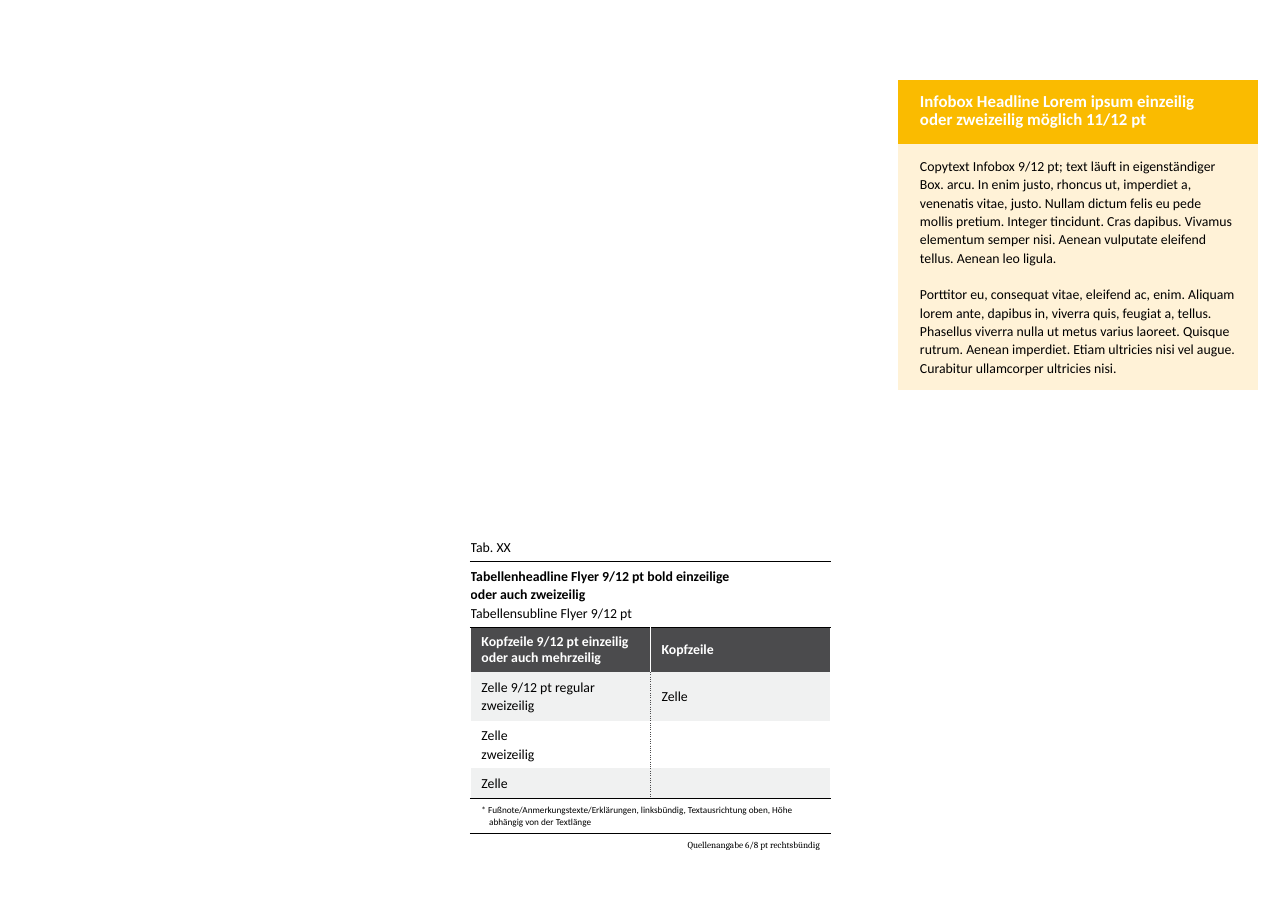
import pptx
import pptx.dml.color
import pptx.enum.text
import pptx.oxml
import pptx.oxml.ns
import pptx.util

Inches = pptx.util.Inches
Pt = pptx.util.Pt
RGBColor = pptx.dml.color.RGBColor
Align = pptx.enum.text.PP_ALIGN
Anchor = pptx.enum.text.MSO_ANCHOR

WHITE = RGBColor(0xFF, 0xFF, 0xFF)
BLACK = RGBColor(0, 0, 0)
GRAPHITE = RGBColor(0x4B, 0x4B, 0x4D)
PALE_GREY = RGBColor(0xF0, 0xF1, 0xF1)
AMBER = RGBColor(0xFA, 0xBB, 0x00)
CREAM = RGBColor(0xFF, 0xF2, 0xD7)
NO_STYLE = "{2D5ABB26-0587-4C30-8999-92F81FD0307C}"
SIDES = ("L", "R", "T", "B")

CAPTION = ["Tab. XX"]
HEADLINE = [
    "Tabellenheadline Flyer 9/12 pt bold einzeilige",
    "oder auch zweizeilig",
    "Tabellensubline Flyer 9/12 pt",
]
HEADER = [["Kopfzeile 9/12 pt einzeilig", "oder auch mehrzeilig"], ["Kopfzeile"]]
BODY = [
    [["Zelle 9/12 pt regular", "zweizeilig"], ["Zelle"]],
    [["Zelle", "zweizeilig"], []],
    [["Zelle"], []],
]
FOOTNOTE = [
    "* Fußnote/Anmerkungstexte/Erklärungen, linksbündig, Textausrichtung oben, "
    "Höhe abhängig von der Textlänge"
]
SOURCE = ["Quellenangabe 6/8 pt rechtsbündig"]
INFO_HEADLINE = [
    "Infobox Headline Lorem ipsum einzeilig",
    "oder zweizeilig möglich 11/12 pt",
]
INFO_COPY = [
    "Copytext Infobox 9/12 pt; text läuft in eigenständiger Box. arcu. In enim justo, "
    "rhoncus ut, imperdiet a, venenatis vitae, justo. Nullam dictum felis eu pede mollis "
    "pretium. Integer tincidunt. Cras dapibus. Vivamus elementum semper nisi. Aenean "
    "vulputate eleifend tellus. Aenean leo ligula.",
    "Porttitor eu, consequat vitae, eleifend ac, enim. Aliquam lorem ante, dapibus in, "
    "viverra quis, feugiat a, tellus. Phasellus viverra nulla ut metus varius laoreet. "
    "Quisque rutrum. Aenean imperdiet. Etiam ultricies nisi vel augue. Curabitur "
    "ullamcorper ultricies nisi.",
]


class FlyerSlide:
    font = "Calibri"
    size = 9
    leading = 12

    def __init__(self, presentation):
        self.slide = presentation.slides.add_slide(presentation.slide_layouts[6])

    def table(self, left, top, width, heights, columns):
        frame = self.slide.shapes.add_table(
            len(heights), columns, Inches(left), Inches(top),
            Inches(width), Inches(sum(heights)))
        grid = frame.table
        grid.first_row = False
        grid.horz_banding = False
        grid._tbl.tblPr.find(pptx.oxml.ns.qn("a:tableStyleId")).text = NO_STYLE
        for row, height in zip(grid.rows, heights):
            row.height = Inches(height)
        return grid

    def borders(self, cell, **lines):
        properties = cell._tc.get_or_add_tcPr()
        for side in SIDES:
            if side in lines:
                color, width, dash = lines[side]
                properties.append(pptx.oxml.parse_xml(
                    f'<a:ln{side} {pptx.oxml.ns.nsdecls("a")} w="{Pt(width)}">'
                    f'<a:solidFill><a:srgbClr val="{color}"/></a:solidFill>'
                    f'<a:prstDash val="{dash}"/></a:ln{side}>'))

    def cell(self, cell, lines, fill=None, color=BLACK, bold=False, size=size,
             leading=leading, font=font, anchor=Anchor.TOP, align=Align.LEFT,
             insets=(0.1, 0.05), gap=0):
        if fill is None:
            cell.fill.background()
        else:
            cell.fill.solid()
            cell.fill.fore_color.rgb = fill
        cell.margin_left = cell.margin_right = Inches(insets[0])
        cell.margin_top = cell.margin_bottom = Inches(insets[1])
        cell.vertical_anchor = anchor
        cell.text_frame.text = "\n".join(lines)
        for paragraph in cell.text_frame.paragraphs:
            paragraph.alignment = align
            if leading:
                paragraph.line_spacing = Pt(leading)
            for run in paragraph.runs:
                run.font.name = font
                run.font.size = Pt(size)
                run.font.bold = bold
                run.font.color.rgb = color
            if not paragraph.runs:
                paragraph._p.append(pptx.oxml.parse_xml(
                    f'<a:endParaRPr {pptx.oxml.ns.nsdecls("a")} sz="{size * 100}"/>'))
        for paragraph in cell.text_frame.paragraphs[:-1]:
            paragraph.space_after = Pt(gap)


def build_data_table(flyer):
    heights = [0.26, 0.6, 0.4, 0.44, 0.43, 0.27, 0.32, 0.27]
    grid = flyer.table(4.27, 4.83, 3.27, heights, 2)
    white = (WHITE, 1, "solid")
    header_divider = (WHITE, 0.75, "solid")
    body_divider = (GRAPHITE, 0.5, "dot")
    rules = {0: (BLACK, 1, "solid"), 5: (BLACK, 0.5, "solid"), 6: (BLACK, 1, "solid")}
    for row in range(len(heights)):
        merged = row not in range(2, 6)
        divider = header_divider if row == 2 else body_divider
        horizontal = {"T": rules.get(row - 1), "B": rules.get(row)}
        horizontal = {side: rule for side, rule in horizontal.items() if rule}
        for column in range(2):
            flyer.borders(
                grid.cell(row, column),
                L=white if merged or column == 0 else divider,
                R=white if merged or column == 1 else divider,
                **horizontal)
        if merged:
            grid.cell(row, 0).merge(grid.cell(row, 1))

    flyer.cell(grid.cell(0, 0), CAPTION, insets=(0, 0.05))
    flyer.cell(grid.cell(1, 0), HEADLINE, bold=True, insets=(0, 0.05))
    grid.cell(1, 0).text_frame.paragraphs[-1].runs[0].font.bold = False
    for column, lines in enumerate(HEADER):
        flyer.cell(grid.cell(2, column), lines, fill=GRAPHITE, color=WHITE,
                   bold=True, leading=None, anchor=Anchor.MIDDLE)
    for index, entries in enumerate(BODY):
        for column, lines in enumerate(entries):
            flyer.cell(grid.cell(3 + index, column), lines,
                       fill=WHITE if index % 2 else PALE_GREY, anchor=Anchor.MIDDLE)
    flyer.cell(grid.cell(6, 0), FOOTNOTE, size=6, leading=8)
    hanging = grid.cell(6, 0).text_frame.paragraphs[0]._p.get_or_add_pPr()
    hanging.set("marL", str(Inches(0.07)))
    hanging.set("indent", str(-Inches(0.07)))
    flyer.cell(grid.cell(7, 0), SOURCE, size=6, leading=8, font="Cambria",
               align=Align.RIGHT)


def build_infobox(flyer):
    grid = flyer.table(8.15, 0.73, 3.27, [0.57, 2.24], 1)
    insets = (0.2, 0.12)
    flyer.cell(grid.cell(0, 0), INFO_HEADLINE, fill=AMBER, color=WHITE, bold=True,
               size=11, anchor=Anchor.MIDDLE, insets=insets)
    flyer.cell(grid.cell(1, 0), INFO_COPY, fill=CREAM, insets=insets, gap=12)


def main():
    presentation = pptx.Presentation()
    presentation.slide_width = Inches(11.69)
    presentation.slide_height = Inches(8.27)
    flyer = FlyerSlide(presentation)
    build_data_table(flyer)
    build_infobox(flyer)
    presentation.save("out.pptx")


if __name__ == "__main__":
    main()
